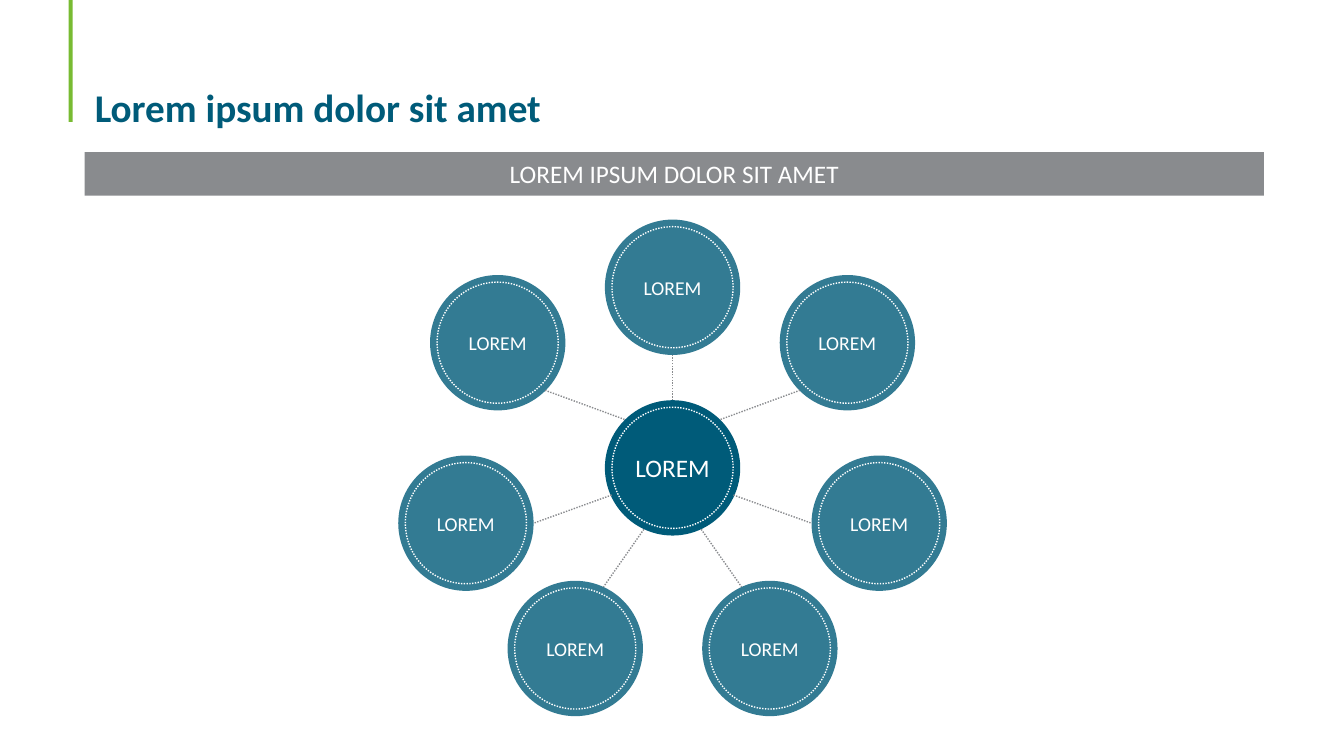
from lxml import etree
from pptx import Presentation
from pptx.dml.color import RGBColor
from pptx.enum.dml import MSO_LINE as Dash
from pptx.enum.shapes import MSO_CONNECTOR as Connector, MSO_SHAPE as Shape
from pptx.enum.text import MSO_ANCHOR as Anchor, PP_ALIGN as Align
from pptx.oxml.ns import qn
from pptx.util import Pt

COLORS = {"teal": "005B79", "green": "78BB32", "gray": "898B8E", "white": "FFFFFF"}
HUB_X, HUB_Y = 480.4, 334.2
DISC, RING = 96.7, 86.5

# Offsets from the hub centre: satellite centre, spoke start, spoke end.
TOP = ((0, -129), (0, -48.2), (0, -81.4))
RIGHT_SIDE = [
    ((124.9, -89.4), (34.3, -34.6), (91, -55.4)),
    ((147.6, 39.5), (43.5, 19.4), (99.4, 39.6)),
    ((69.5, 129), (20.5, 43.9), (49.3, 85)),
]


def mirrored(points):
    return tuple((-x, y) for x, y in points)


class SlideBuilder:
    def __init__(self, slide, font):
        self.slide = slide
        self.font = font

    def color(self, name):
        return RGBColor.from_string(COLORS[name])

    def label(self, frame, text, size, color, align, bold=False):
        frame.text = text
        paragraph = frame.paragraphs[0]
        paragraph.alignment = align
        font = paragraph.runs[0].font
        font.name, font.size, font.bold = self.font, Pt(size), bold
        font.color.rgb = self.color(color)

    def title(self, text, left, top, width, height):
        title = self.slide.shapes.title
        title.left, title.top = Pt(left), Pt(top)
        title.width, title.height = Pt(width), Pt(height)
        title.text_frame.vertical_anchor = Anchor.BOTTOM
        self.label(title.text_frame, text, 28, "teal", Align.LEFT, bold=True)
        title.text_frame.paragraphs[0].line_spacing = 0.9

    def block(self, color, left, top, width, height, text=""):
        block = self.slide.shapes.add_shape(
            Shape.RECTANGLE, Pt(left), Pt(top), Pt(width), Pt(height))
        block.shadow.inherit = False
        block.fill.solid()
        block.fill.fore_color.rgb = self.color(color)
        block.line.fill.background()
        if text:
            block.text_frame.vertical_anchor = Anchor.MIDDLE
            self.label(block.text_frame, text, 18, "white", Align.CENTER)

    def circle(self, group, x, y, diameter):
        """Add a circle centred on (x, y) to the group."""
        circle = group.shapes.add_shape(
            Shape.OVAL, Pt(x - diameter / 2), Pt(y - diameter / 2),
            Pt(diameter), Pt(diameter))
        circle.shadow.inherit = False
        return circle

    def dotted(self, line, color):
        line.color.rgb = self.color(color)
        line.width = Pt(1)
        line.dash_style = Dash.ROUND_DOT

    def badge(self, text, x, y, size, opacity=100):
        """Add a labelled disc with a dotted ring inside its edge."""
        group = self.slide.shapes.add_group_shape()
        disc = self.circle(group, x, y, DISC)
        disc.fill.solid()
        disc.fill.fore_color.rgb = self.color("teal")
        if opacity < 100:
            fill_color = disc._element.spPr.find(qn("a:solidFill"))[0]
            etree.SubElement(fill_color, qn("a:alpha")).set("val", str(opacity * 1000))
        disc.line.fill.background()
        frame = disc.text_frame
        frame.margin_left = frame.margin_right = 0
        frame.margin_top = frame.margin_bottom = 0
        frame.vertical_anchor = Anchor.MIDDLE
        self.label(frame, text, size, "white", Align.CENTER)
        ring = self.circle(group, x, y, RING)
        ring.fill.background()
        self.dotted(ring.line, "white")

    def spoke(self, start, end):
        spoke = self.slide.shapes.add_connector(
            Connector.STRAIGHT,
            Pt(HUB_X + start[0]), Pt(HUB_Y + start[1]),
            Pt(HUB_X + end[0]), Pt(HUB_Y + end[1]))
        self.dotted(spoke.line, "gray")
        etree.SubElement(spoke._element.spPr, qn("a:effectLst"))


def main():
    deck = Presentation()
    deck.slide_width, deck.slide_height = Pt(960), Pt(540)
    builder = SlideBuilder(deck.slides.add_slide(deck.slide_layouts[5]), "Calibri")

    builder.block("green", 49, 0, 2.9, 87.2)
    builder.title("Lorem ipsum dolor sit amet", 60.5, 29.5, 862.6, 67.7)

    satellites = [TOP, *RIGHT_SIDE, *map(mirrored, RIGHT_SIDE)]
    builder.badge("LOREM", HUB_X, HUB_Y, 18)
    for (dx, dy), _, _ in satellites:
        builder.badge("LOREM", HUB_X + dx, HUB_Y + dy, 14, opacity=80)
    for _, start, end in satellites:
        builder.spoke(start, end)

    builder.block("gray", 60.5, 108.7, 842.4, 31, "LOREM IPSUM DOLOR SIT AMET")
    deck.save("out.pptx")


if __name__ == "__main__":
    main()
